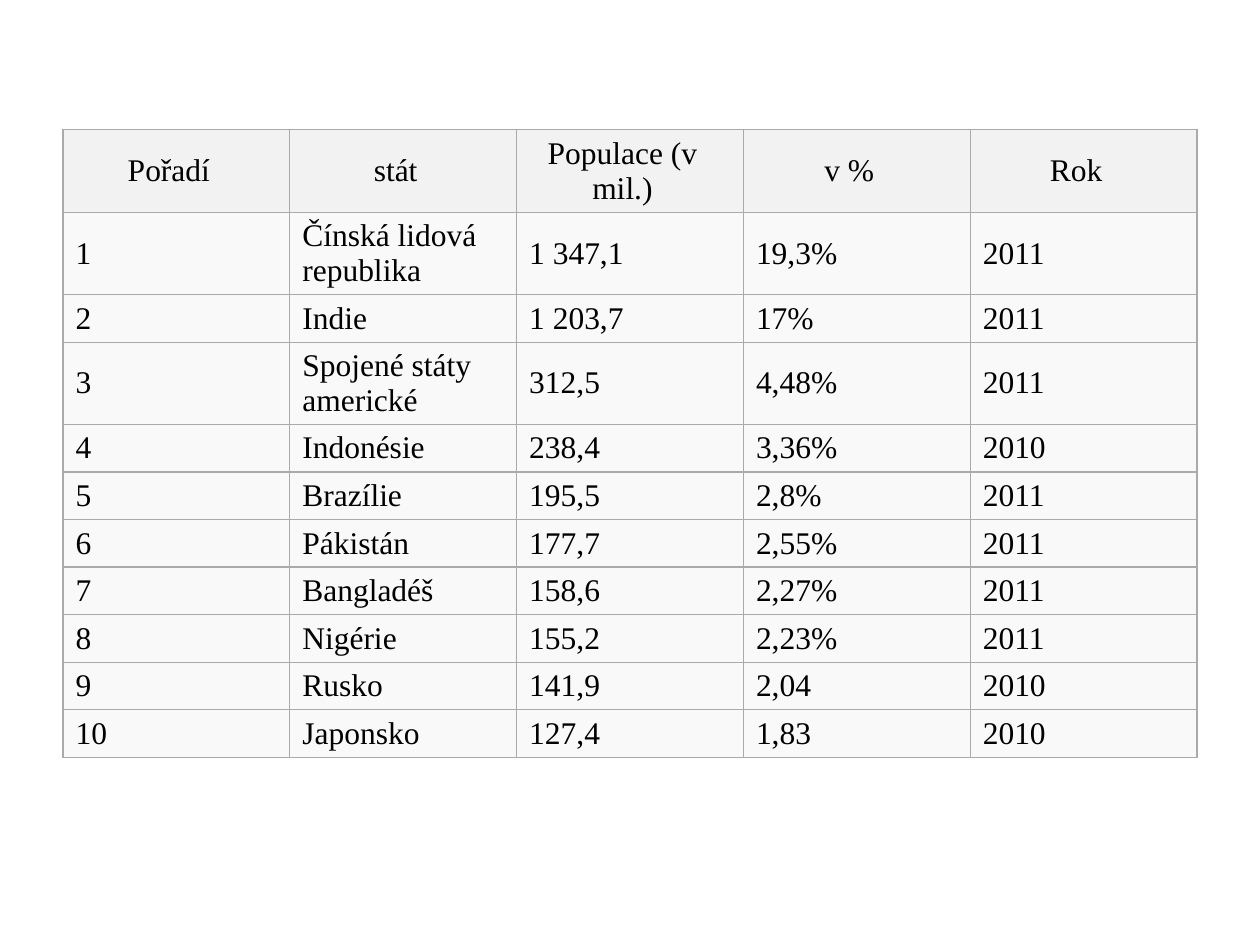
from lxml.etree import SubElement
from pptx import Presentation
from pptx.dml.color import RGBColor
from pptx.enum.text import MSO_ANCHOR, PP_ALIGN
from pptx.oxml.ns import qn
from pptx.util import Inches, Pt


def color(value):
    return RGBColor.from_string(value)


def add_borders(cell, value, width):
    properties = cell._tc.get_or_add_tcPr()
    for position, side in enumerate(("a:lnL", "a:lnR", "a:lnT", "a:lnB")):
        line = SubElement(properties, qn(side), w=str(Pt(width)))
        fill = SubElement(line, qn("a:solidFill"))
        SubElement(fill, qn("a:srgbClr"), val=value)
        properties.insert(position, line)


countries = [
    ("Pořadí", "stát", "Populace (v mil.)", "v %", "Rok"),
    ("1", "Čínská lidová republika", "1 347,1", "19,3%", "2011"),
    ("2", "Indie", "1 203,7", "17%", "2011"),
    ("3", "Spojené státy americké", "312,5", "4,48%", "2011"),
    ("4", "Indonésie", "238,4", "3,36%", "2010"),
    ("5", "Brazílie", "195,5", "2,8%", "2011"),
    ("6", "Pákistán", "177,7", "2,55%", "2011"),
    ("7", "Bangladéš", "158,6", "2,27%", "2011"),
    ("8", "Nigérie", "155,2", "2,23%", "2011"),
    ("9", "Rusko", "141,9", "2,04", "2010"),
    ("10", "Japonsko", "127,4", "1,83", "2010"),
]
two_line_rows = (0, 1, 3)
text_format = {"name": "Times New Roman", "size": Pt(18), "bold": False}
header_format = {"margin_left": Inches(0.1), "margin_right": Inches(0.22)}

deck = Presentation()
deck.slide_width = Inches(10)
deck.slide_height = Inches(7.5)
page = deck.slides.add_slide(deck.slide_layouts[6])

frame = page.shapes.add_table(
    len(countries), len(countries[0]),
    Inches(0.5), Inches(1.03), Inches(9), Inches(4.91),
)
table = frame.table
table.first_row = False
table.horz_banding = False

for row_index, values in enumerate(countries):
    is_header = row_index == 0
    height = 0.65 if row_index in two_line_rows else 0.37
    table.rows[row_index].height = Inches(height)
    for column_index, value in enumerate(values):
        cell = table.cell(row_index, column_index)
        cell.vertical_anchor = MSO_ANCHOR.MIDDLE
        cell.fill.solid()
        cell.fill.fore_color.rgb = color("F2F2F2" if is_header else "F9F9F9")
        add_borders(cell, "AAAAAA", 0.75)
        para = cell.text_frame.paragraphs[0]
        para.alignment = PP_ALIGN.CENTER if is_header else PP_ALIGN.LEFT
        span = para.add_run()
        span.text = value
        span.font.color.rgb = color("000000")
        for name, setting in text_format.items():
            setattr(span.font, name, setting)
        if is_header:
            for name, setting in header_format.items():
                setattr(cell, name, setting)

deck.save("out.pptx")
